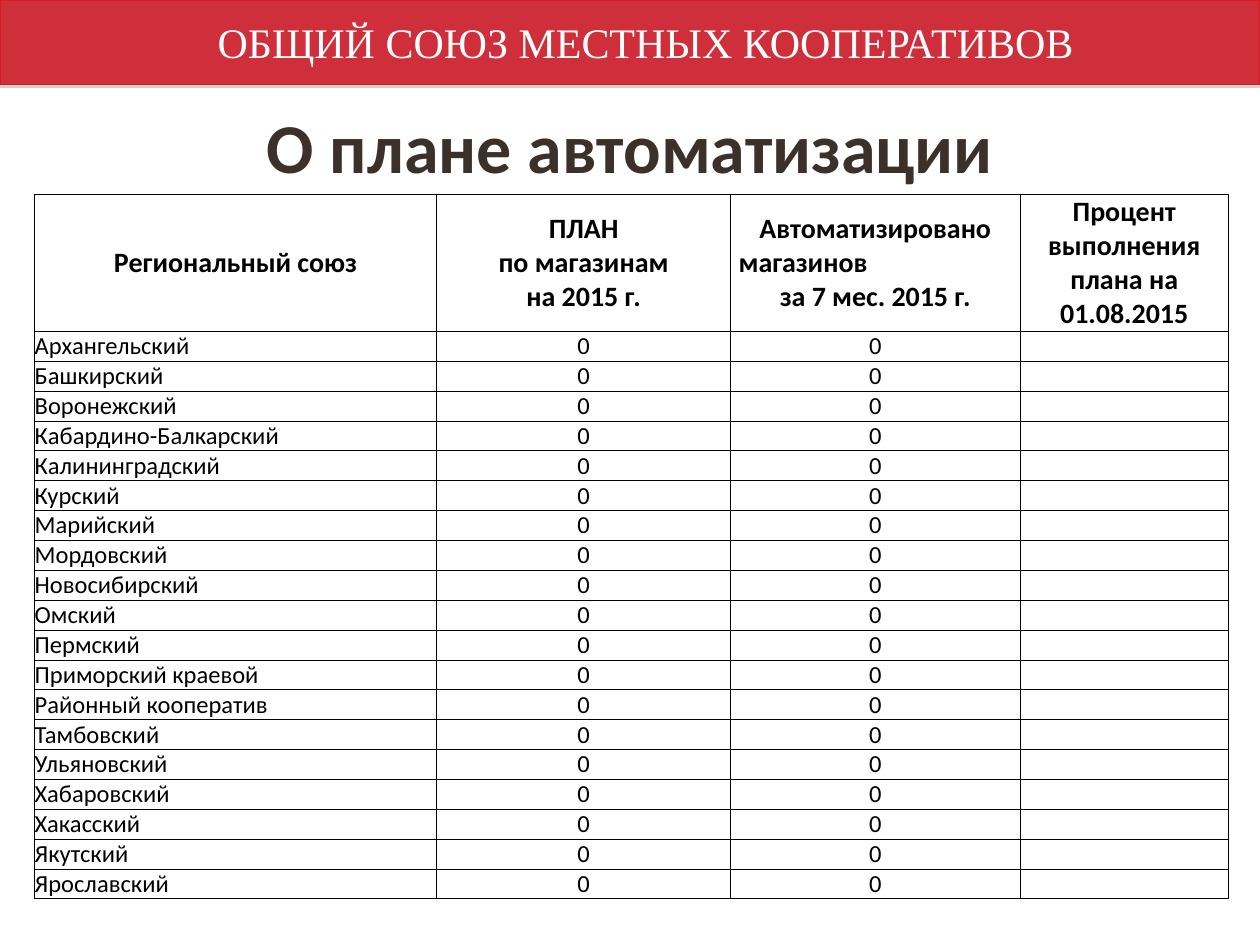
import lxml.etree
import pptx
import pptx.dml.color
import pptx.enum.shapes
import pptx.enum.text
import pptx.oxml.ns
import pptx.util

Cm, Pt = pptx.util.Cm, pptx.util.Pt
LEFT, CENTER = pptx.enum.text.PP_ALIGN.LEFT, pptx.enum.text.PP_ALIGN.CENTER
MIDDLE = pptx.enum.text.MSO_ANCHOR.MIDDLE

BANNER = "ОБЩИЙ СОЮЗ МЕСТНЫХ КООПЕРАТИВОВ"
TITLE = "О плане автоматизации"
HEADERS = [
    [("Региональный союз", CENTER, 0)],
    [("ПЛАН", CENTER, 0), ("по магазинам", CENTER, 0), ("на 2015 г.", CENTER, 0)],
    [("Автоматизировано", CENTER, 0), ("магазинов", LEFT, 0.16), ("за 7 мес. 2015 г.", CENTER, 0)],
    [("Процент выполнения плана на 01.08.2015", CENTER, 0)],
]
UNIONS = [
    "Архангельский", "Башкирский", "Воронежский", "Кабардино-Балкарский",
    "Калининградский", "Курский", "Марийский", "Мордовский", "Новосибирский",
    "Омский", "Пермский", "Приморский краевой", "Районный кооператив",
    "Тамбовский", "Ульяновский", "Хабаровский", "Хакасский", "Якутский", "Ярославский",
]
PLAN, AUTOMATED, PERCENT = "0", "0", ""

THEME = {
    "banner": "CF2F3A", "banner_line": "DA1923", "shadow": "808080",
    "white": "FFFFFF", "title": "3C302A", "black": "000000",
    "banner_size": 24, "title_size": 40, "header_size": 16, "row_size": 14,
    "serif": "Times New Roman", "sans": "Calibri",
}
SLIDE_W, SLIDE_H = 25.4, 19.05
TABLE_LEFT, TABLE_TOP = 0.7, 3.92
COLUMN_WIDTHS = [8.1, 5.93, 5.83, 4.21]
HEADER_H, ROW_H = 2.74, 0.6
THIN, THICK = 0.5, 1


def rgb(name):
    return pptx.dml.color.RGBColor.from_string(THEME[name])


def add_xml(parent, tag, **attributes):
    values = {key: str(value) for key, value in attributes.items()}
    return lxml.etree.SubElement(parent, pptx.oxml.ns.qn(tag), values)


def write(frame, lines, size, color="black", font="sans", bold=False):
    for index, (text, align, indent) in enumerate(lines):
        paragraph = frame.paragraphs[0] if index == 0 else frame.add_paragraph()
        paragraph.alignment = align
        if indent:
            paragraph._p.get_or_add_pPr().set("marL", str(Cm(indent)))
        if not text:
            add_xml(paragraph._p, "a:endParaRPr", sz=THEME[size] * 100)
            continue
        run = paragraph.add_run()
        run.text = text
        run.font.size = Pt(THEME[size])
        run.font.name = THEME[font]
        run.font.bold = bold
        run.font.color.rgb = rgb(color)


def add_banner(slide):
    banner = slide.shapes.add_shape(
        pptx.enum.shapes.MSO_SHAPE.RECTANGLE, 0, 0, Cm(SLIDE_W), Cm(1.7))
    slide.shapes._spTree.insert(2, banner._element)
    banner.fill.solid()
    banner.fill.fore_color.rgb = rgb("banner")
    banner.line.color.rgb = rgb("banner_line")
    banner.line.width = Pt(0.75)
    effects = add_xml(banner._element.spPr, "a:effectLst")
    shadow = add_xml(effects, "a:outerShdw", blurRad=0, dist=Pt(1.8), dir=90 * 60000, rotWithShape=0)
    shade = add_xml(shadow, "a:srgbClr", val=THEME["shadow"])
    add_xml(shade, "a:alpha", val=35000)
    frame = banner.text_frame
    frame.word_wrap = True
    frame.vertical_anchor = MIDDLE
    frame.margin_left = Cm(0.88)
    write(frame, [(BANNER, CENTER, 0)], "banner_size", color="white", font="serif")


def add_title(slide):
    title = slide.shapes.title
    title.left, title.top, title.width, title.height = 0, Cm(1.73), Cm(SLIDE_W), Cm(2.39)
    title.text_frame.vertical_anchor = MIDDLE
    write(title.text_frame, [(TITLE, CENTER, 0)], "title_size", color="title", bold=True)


def format_cell(cell, top, bottom):
    cell.margin_left = cell.margin_right = cell.margin_top = cell.margin_bottom = 0
    cell.vertical_anchor = MIDDLE
    properties = cell._tc.get_or_add_tcPr()
    for side, width in (("L", THIN), ("R", THIN), ("T", top), ("B", bottom)):
        border = add_xml(properties, f"a:ln{side}", w=Pt(width))
        add_xml(add_xml(border, "a:solidFill"), "a:srgbClr", val=THEME["black"])
    cell.fill.background()


def add_plan_table(slide):
    rows = [HEADERS] + [
        [[(union, LEFT, 0)]] + [[(value, CENTER, 0)] for value in (PLAN, AUTOMATED, PERCENT)]
        for union in UNIONS
    ]
    height = HEADER_H + ROW_H * len(UNIONS)
    plan = slide.shapes.add_table(
        len(rows), len(COLUMN_WIDTHS), Cm(TABLE_LEFT), Cm(TABLE_TOP),
        Cm(sum(COLUMN_WIDTHS)), Cm(height)).table
    plan.first_row = plan.horz_banding = False
    for column, width in zip(plan.columns, COLUMN_WIDTHS):
        column.width = Cm(width)
    for r, row in enumerate(rows):
        is_header = r == 0
        plan.rows[r].height = Cm(HEADER_H if is_header else ROW_H)
        for c, lines in enumerate(row):
            rule = THIN if c == len(row) - 1 else THICK
            cell = plan.cell(r, c)
            format_cell(cell, rule if r == 1 else THIN, rule if is_header else THIN)
            write(cell.text_frame, lines, "header_size" if is_header else "row_size", bold=is_header)


def main():
    deck = pptx.Presentation()
    deck.slide_width, deck.slide_height = Cm(SLIDE_W), Cm(SLIDE_H)
    slide = deck.slides.add_slide(deck.slide_layouts[5])
    add_banner(slide)
    add_title(slide)
    add_plan_table(slide)
    deck.save("out.pptx")


if __name__ == "__main__":
    main()
